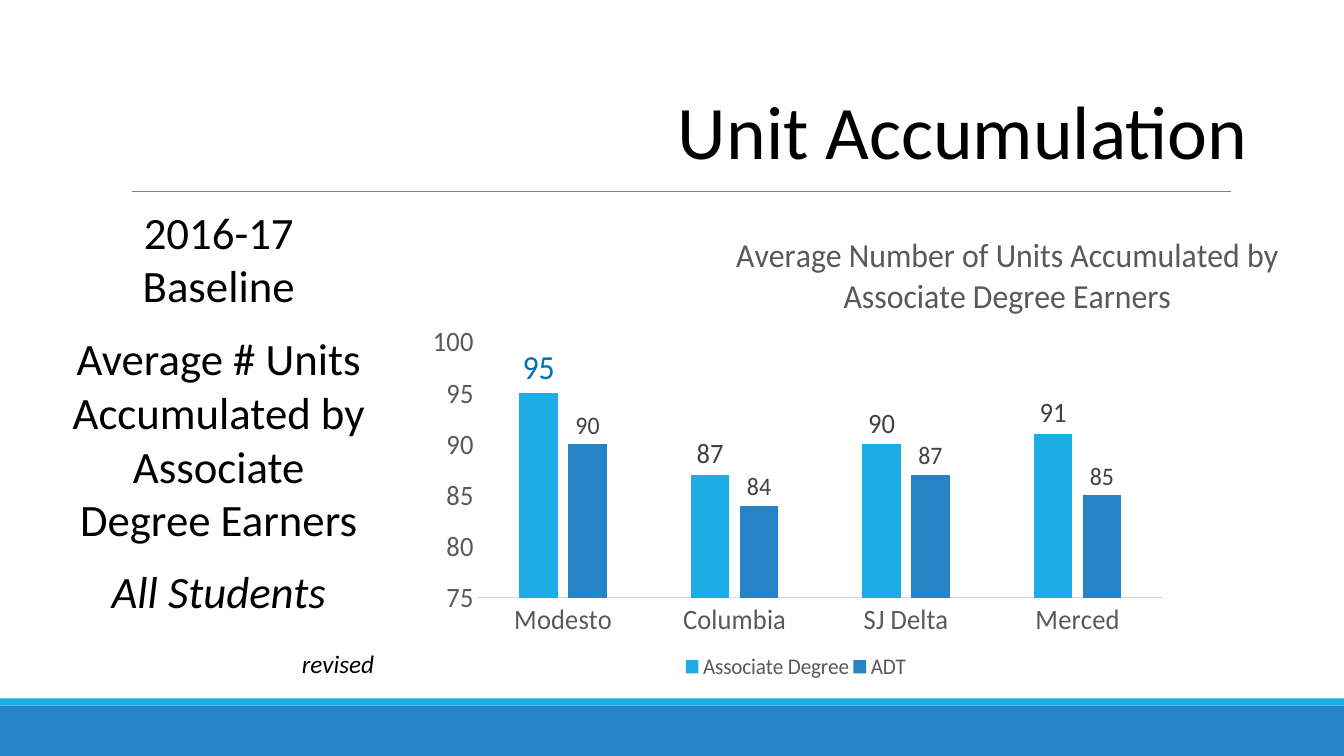
"""Build the Unit Accumulation slide with its column chart."""
from dataclasses import dataclass

from lxml import etree
from pptx import Presentation
from pptx.chart.data import CategoryChartData
from pptx.dml.color import RGBColor
from pptx.enum import chart as ch, shapes, text
from pptx.oxml import ns
from pptx.util import Cm, Pt

FONT = "Calibri"
BLACK = RGBColor(0x00, 0x00, 0x00)
GREY = RGBColor(0x59, 0x59, 0x59)
DARK = RGBColor(0x40, 0x40, 0x40)
RULE = RGBColor(0x80, 0x80, 0x80)
AXIS = RGBColor(0xD9, 0xD9, 0xD9)
SKY = RGBColor(0x1C, 0xAD, 0xE4)
BLUE = RGBColor(0x26, 0x83, 0xC6)
ACCENT = RGBColor(0x00, 0x70, 0xC0)


@dataclass
class Band:
    top: float
    height: float
    color: RGBColor


@dataclass
class Degree:
    name: str
    units: tuple[int, ...]
    color: RGBColor
    label_size: float


@dataclass
class Line:
    words: str
    size: float = 32
    before: float = 0
    italic: bool = False
    align: text.PP_ALIGN = text.PP_ALIGN.CENTER


BANDS = [Band(17.78, 1.27, BLUE), Band(17.6, 0.18, SKY)]
COLLEGES = ("Modesto", "Columbia", "SJ Delta", "Merced")
DEGREES = [
    Degree("Associate Degree", (95, 87, 90, 91), SKY, 20),
    Degree("ADT", (90, 84, 87, 85), BLUE, 18),
]
HEADING = [Line("Unit Accumulation", 54, align=text.PP_ALIGN.RIGHT)]
BASELINE = [
    Line("2016-17 Baseline"),
    Line("Average # Units Accumulated by Associate Degree Earners", before=13.4),
    Line("All Students", before=12.8, italic=True),
    Line("revised", 18, before=22, italic=True, align=text.PP_ALIGN.RIGHT),
]


def style(font, size: float, color: RGBColor, italic: bool = False) -> None:
    """Set face, size, colour and slant of a font."""
    font.name, font.size, font.italic, font.bold = FONT, Pt(size), italic, False
    font.color.rgb = color


def add_text(slide, lines: list[Line], *, left: float, top: float, width: float,
             height: float, inset: float = 0.13) -> None:
    """Add a wrapped text box holding the given lines."""
    frame = slide.shapes.add_textbox(Cm(left), Cm(top), Cm(width), Cm(height)).text_frame
    frame.word_wrap = True
    frame.margin_top = Cm(inset)
    for number, line in enumerate(lines):
        paragraph = frame.add_paragraph() if number else frame.paragraphs[0]
        paragraph.alignment = line.align
        paragraph.space_before = Pt(line.before)
        run = paragraph.add_run()
        run.text = line.words
        style(run.font, line.size, BLACK, line.italic)


def add_band(slide, band: Band, width: int) -> None:
    """Add a full-width footer band."""
    strip = slide.shapes.add_shape(shapes.MSO_SHAPE.RECTANGLE, 0, Cm(band.top),
                                   width, Cm(band.height))
    strip.shadow.inherit = False
    strip.fill.solid()
    strip.fill.fore_color.rgb = band.color
    strip.line.fill.background()


def add_rule(slide) -> None:
    """Add the thin line under the heading."""
    rule = slide.shapes.add_connector(shapes.MSO_CONNECTOR.STRAIGHT,
                                      Cm(3.33), Cm(4.82), Cm(31.01), Cm(4.82))
    rule.line.color.rgb = RULE
    rule.line.width = Pt(0.5)
    etree.SubElement(rule._element.spPr, ns.qn("a:effectLst"))


def place(part, **spots: float | str) -> None:
    """Fix a chart part at fractions of the chart area."""
    for old in part.findall(ns.qn("c:layout")):
        part.remove(old)
    layout = etree.Element(ns.qn("c:layout"))
    manual = etree.SubElement(layout, ns.qn("c:manualLayout"))
    for tag, value in spots.items():
        etree.SubElement(manual, ns.qn(f"c:{tag}")).set("val", str(value))
    overlay = part.find(ns.qn("c:overlay"))
    part.insert(0 if overlay is None else part.index(overlay), layout)


def add_units_chart(slide) -> None:
    """Add the clustered columns of units by college."""
    data = CategoryChartData()
    data.categories = COLLEGES
    for degree in DEGREES:
        data.add_series(degree.name, degree.units)
    chart = slide.shapes.add_chart(ch.XL_CHART_TYPE.COLUMN_CLUSTERED, Cm(10.59), Cm(5.21),
                                   Cm(21.77), Cm(12.17), data).chart
    style(chart.font, 10, BLACK)

    chart.has_title = True
    caption = chart.chart_title.text_frame.paragraphs[0].add_run()
    caption.text = "Average Number of Units Accumulated by Associate Degree Earners"
    style(caption.font, 24, GREY)
    chart.chart_title.include_in_layout = False
    place(chart.chart_title._element, xMode="edge", yMode="edge", x=0.38, y=0.04)

    chart.has_legend = True
    chart.legend.position = ch.XL_LEGEND_POSITION.BOTTOM
    chart.legend.include_in_layout = False
    style(chart.legend.font, 16, GREY)
    place(chart.legend._element, xMode="edge", yMode="edge", x=0.32, y=0.93, w=0.28, h=0.06)

    for axis in (chart.category_axis, chart.value_axis):
        axis.major_tick_mark = axis.minor_tick_mark = ch.XL_TICK_MARK.NONE
        style(axis.tick_labels.font, 20, GREY)
    chart.category_axis.format.line.color.rgb = AXIS
    chart.category_axis.format.line.width = Pt(0.75)
    units = chart.value_axis
    units.format.line.fill.background()
    units.has_major_gridlines = False
    units.minimum_scale, units.maximum_scale, units.major_unit = 75, 100, 5

    plot = chart.plots[0]
    plot.gap_width, plot.overlap, plot.vary_by_categories = 219, -27, False
    for degree, columns in zip(DEGREES, plot.series):
        columns.format.fill.solid()
        columns.format.fill.fore_color.rgb = degree.color
        labels = columns.data_labels
        labels.show_value = True
        labels.position = ch.XL_LABEL_POSITION.OUTSIDE_END
        style(labels.font, degree.label_size, DARK)
    highest = plot.series[0].points[0].data_label
    style(highest.font, 24, ACCENT)
    highest.position = ch.XL_LABEL_POSITION.OUTSIDE_END
    place(chart._chartSpace.chart.plotArea, layoutTarget="inner", xMode="edge", yMode="edge",
          x=0.07, y=0.28, w=0.84, h=0.53)


def main() -> None:
    """Assemble and save the slide."""
    deck = Presentation()
    deck.slide_width, deck.slide_height = Cm(33.87), Cm(19.05)
    slide = deck.slides.add_slide(deck.slide_layouts[6])
    for band in BANDS:
        add_band(slide, band, deck.slide_width)
    add_rule(slide)
    add_text(slide, HEADING, left=13.82, top=1.98, width=17.88, height=2.57)
    add_text(slide, BASELINE, left=1.35, top=4.55, width=8.33, height=12.85, inset=0.6)
    add_units_chart(slide)


    deck.save("out.pptx")


if __name__ == "__main__":
    main()
